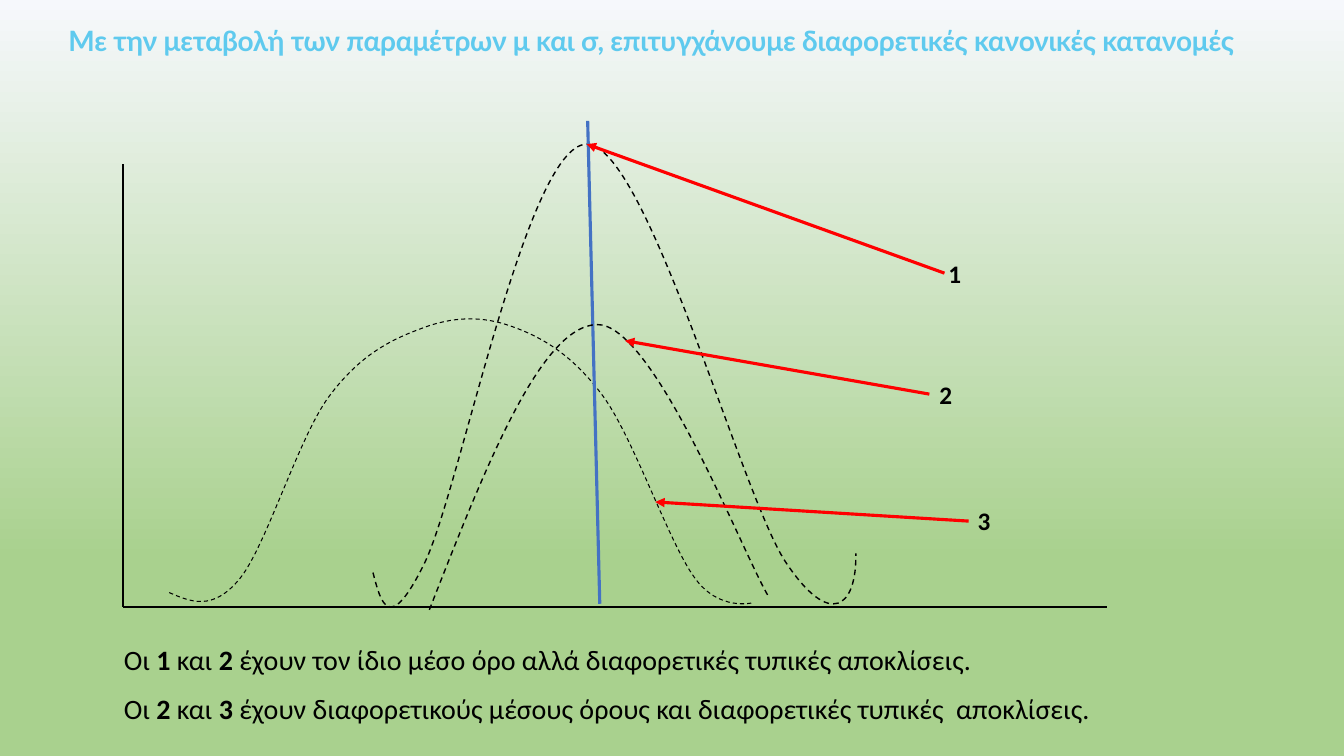
from lxml.etree import SubElement
from pptx import Presentation
from pptx.dml.color import RGBColor
from pptx.enum.dml import MSO_LINE_DASH_STYLE as Dash
from pptx.enum.shapes import MSO_CONNECTOR as Connector
from pptx.enum.text import MSO_ANCHOR as Anchor, MSO_AUTO_SIZE as AutoSize, PP_ALIGN as Align
from pptx.oxml.ns import qn
from pptx.util import Inches, Pt

CELL = Inches(0.1)  # side of one grid square
COLUMNS, ROWS = 133.33, 75
COLORS = {
    "sky": "F6F8FC",
    "grass": "A9D18E",
    "title": "5FCAEE",
    "ink": "000000",
    "mean": "4472C4",
    "pointer": "FF0000",
}

# Each curve: line width, box, start point, then Bezier segments (control, control, end).
CURVES = [
    (1, (37, 14.3, 47.9, 45.9), (37, 56.8), [
        ((37.8, 59.9), (38.6, 63), (42.1, 55.9)),
        ((45.6, 48.8), (52.2, 14.4), (58.2, 14.3)),
        ((64.1, 14.3), (73.5, 49), (77.9, 55.7)),
        ((82.4, 62.5), (85, 60.2), (84.9, 54.9)),
    ]),
    (0.75, (16.8, 31.6, 58, 28.3), (16.8, 58.8), [
        ((18.9, 59.7), (21.1, 60.7), (23.8, 57.4)),
        ((26.4, 54.2), (29.6, 43.5), (32.6, 39.4)),
        ((35.7, 35.2), (38.8, 33.7), (41.8, 32.6)),
        ((44.9, 31.4), (47.8, 31.3), (50.8, 32.4)),
        ((53.9, 33.5), (56.9, 35.3), (59.9, 39.4)),
        ((62.9, 43.6), (66.4, 53.9), (68.9, 57.3)),
        ((71.3, 60.7), (74.7, 59.8), (74.7, 59.8)),
    ]),
    (1, (42.6, 32.2, 33.6, 28.3), (42.6, 60.5), [
        ((48.1, 46.5), (53.6, 32.4), (59.2, 32.2)),
        ((64.8, 32), (73.6, 54.7), (76.2, 59.1)),
    ]),
]
VERTICAL_AXIS = ((12.2, 16.3), (12.2, 60.2))
HORIZONTAL_AXIS = ((109.8, 60.2), (12.2, 60.2))
MEAN_LINE = ((59.5, 59.9), (58.3, 12))
# Each pointer: label, label box, arrow start, arrow tip.
POINTERS = [
    ("1", (93.1, 25.1, 3.3, 4), (93.7, 27.1), (58.2, 14.3)),
    ("2", (92.2, 37.1, 3, 4), (92.2, 39.1), (62, 33.8)),
    ("3", (96, 49.6, 2.7, 4), (96.1, 51.7), (65, 49.8)),
]
TITLE = "Με την μεταβολή των παραμέτρων μ και σ, επιτυγχάνουμε διαφορετικές κανονικές κατανομές "
NOTES = [
    ("1 ", "2 ", "έχουν τον ίδιο μέσο όρο αλλά διαφορετικές τυπικές αποκλίσεις."),
    ("2 ", "3 ", "έχουν διαφορετικούς μέσους όρους και διαφορετικές τυπικές  αποκλίσεις."),
]


def grid(*cells):
    return [round(cell * CELL) for cell in cells]


def color(name):
    return RGBColor.from_string(COLORS[name])


def style_line(line, color_name, width):
    line.color.rgb = color(color_name)
    line.width = Pt(width)


def set_background(slide):
    fill = slide.background.fill
    fill.gradient()
    fill.gradient_angle = 270
    for stop, position, name in zip(fill.gradient_stops, (0, 0.74), ("sky", "grass")):
        stop.position = position
        stop.color.rgb = color(name)


def add_line(shapes, start, end, color_name, width, arrow=False):
    connector = shapes.add_connector(Connector.STRAIGHT, *grid(*start, *end))
    style_line(connector.line, color_name, width)
    if arrow:
        SubElement(connector.line._get_or_add_ln(), qn("a:tailEnd"), type="triangle")
    SubElement(connector._element.spPr, qn("a:effectLst"))


def add_curve(shapes, width, box, start, segments):
    """Size a freeform by its box, then give its outline true Bezier segments."""
    left, top, columns, rows = box
    builder = shapes.build_freeform(*grid(left, top))
    builder.add_line_segments([grid(left + columns, top + rows)], close=False)
    curve = builder.convert_to_shape()
    outline = next(curve._element.iter(qn("a:path")))
    for command in list(outline):
        outline.remove(command)
    for tag, points in [("a:moveTo", [start])] + [("a:cubicBezTo", part) for part in segments]:
        command = SubElement(outline, qn(tag))
        for column, row in points:
            x, y = grid(column - left, row - top)
            SubElement(command, qn("a:pt"), x=str(x), y=str(y))
    curve.shadow.inherit = False
    curve.fill.background()
    style_line(curve.line, "ink", width)
    curve.line.dash_style = Dash.DASH


def add_text_frame(shapes, box, anchor=Anchor.TOP, wrap=True, grow=True):
    frame = shapes.add_textbox(*grid(*box)).text_frame
    frame.word_wrap = wrap
    frame.vertical_anchor = anchor
    frame.auto_size = AutoSize.SHAPE_TO_FIT_TEXT if grow else AutoSize.NONE
    return frame


def add_run(paragraph, text, size, bold=False, font="Calibri", color_name="ink"):
    run = paragraph.add_run()
    run.text = text
    run.font.name = font
    run.font.size = Pt(size)
    run.font.bold = bold
    run.font.color.rgb = color(color_name)
    return run


def add_title(slide):
    frame = add_text_frame(slide.shapes, (6.7, 2.2, 120, 3.5), Anchor.MIDDLE)
    frame.margin_left = frame.margin_right = frame.margin_bottom = 0
    frame.margin_top = Inches(0.01)
    paragraph = frame.paragraphs[0]
    paragraph.alignment = Align.JUSTIFY
    paragraph.space_before = Pt(1.1)
    paragraph._p.get_or_add_pPr().set("marL", str(Inches(0.01)))
    run = add_run(paragraph, TITLE, 20, True, "Lato", "title")
    run.font._element.set("spc", "-20")


def add_diagram(slide):
    shapes = slide.shapes.add_group_shape().shapes
    tall_curve, shifted_curve, low_curve = CURVES
    add_curve(shapes, *tall_curve)
    for axis in (VERTICAL_AXIS, HORIZONTAL_AXIS):
        add_line(shapes, *axis, "ink", 1.5)
    add_curve(shapes, *shifted_curve)
    add_line(shapes, *MEAN_LINE, "mean", 2.25)
    add_curve(shapes, *low_curve)
    for _, _, start, tip in POINTERS:
        add_line(shapes, start, tip, "pointer", 2.25, arrow=True)
    for label, box, _, _ in POINTERS:
        add_run(add_text_frame(shapes, box).paragraphs[0], label, 18, True)


def add_notes(slide):
    frame = add_text_frame(slide.shapes, (11.3, 61.6, 98.5, 12.5), Anchor.MIDDLE, False, False)
    for index, (first, second, statement) in enumerate(NOTES):
        paragraph = frame.add_paragraph() if index else frame.paragraphs[0]
        paragraph.alignment = Align.JUSTIFY
        paragraph.space_before = Pt(10.5)
        for text in ("Οι ", first, "και ", second, statement):
            add_run(paragraph, text, 20, bold=text in (first, second))


def main():
    presentation = Presentation()
    presentation.slide_width, presentation.slide_height = grid(COLUMNS, ROWS)
    slide = presentation.slides.add_slide(presentation.slide_layouts[6])
    set_background(slide)
    add_title(slide)
    add_diagram(slide)
    add_notes(slide)
    presentation.save("out.pptx")


if __name__ == "__main__":
    main()
